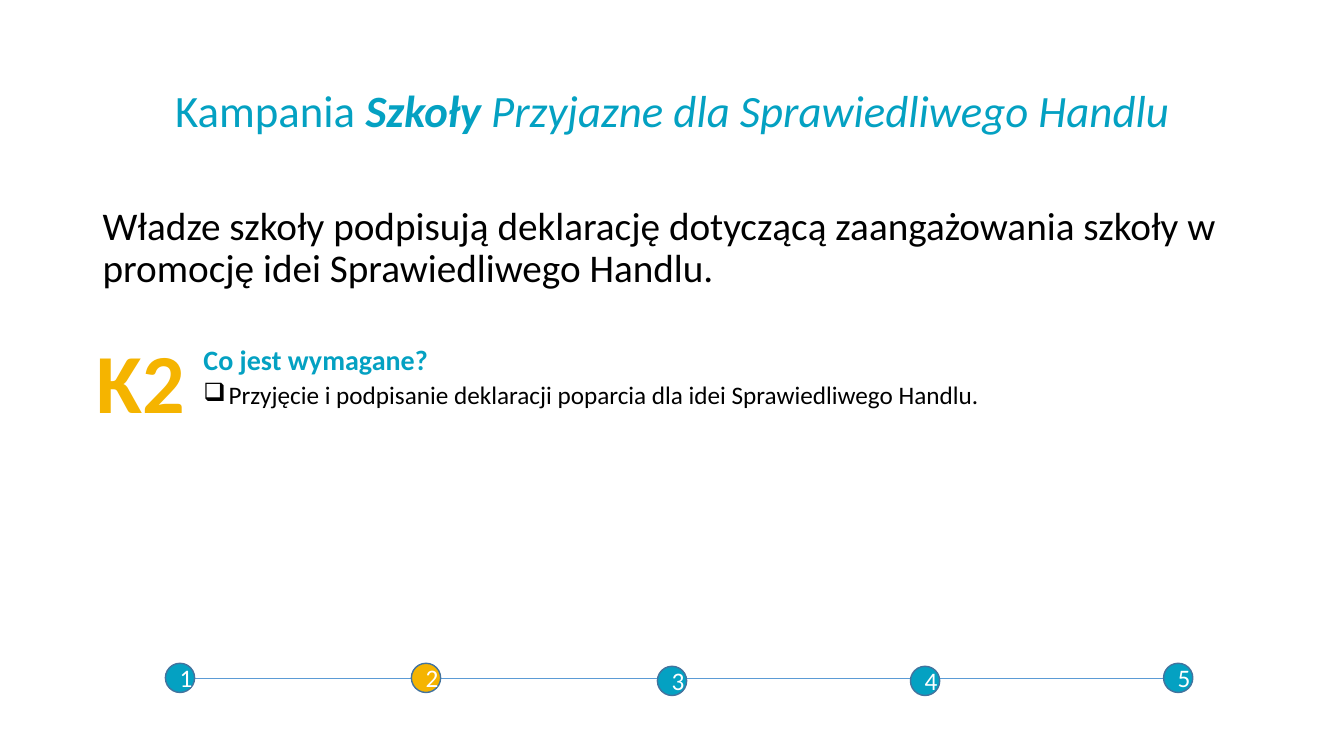
import pptx
import pptx.util
import pptx.dml.color
import pptx.enum.shapes
import pptx.enum.text
import pptx.oxml.ns
import lxml.etree

Inches = pptx.util.Inches
Pt = pptx.util.Pt
ALIGN = pptx.enum.text.PP_ALIGN
ANCHOR = pptx.enum.text.MSO_ANCHOR

TEAL, AMBER, BLACK, WHITE = "04A1C2", "F5B400", "000000", "FFFFFF"
RIM, TRACK = "43739E", "5B9BD5"


def color(hex_code):
    return pptx.dml.color.RGBColor.from_string(hex_code)


def apply(target, values):
    for name, value in values.items():
        setattr(target, name, value)


def add_run(paragraph, text, size, ink, **style):
    run = paragraph.add_run()
    run.text = text
    apply(run.font, {"name": "Calibri", "size": Pt(size), **style})
    run.font.color.rgb = color(ink)


def add_text_box(slide, left, top, width, height, **frame_format):
    box = slide.shapes.add_textbox(Inches(left), Inches(top), Inches(width), Inches(height))
    apply(box.text_frame, {"word_wrap": True, **frame_format})
    return box.text_frame


def indent(paragraph, left, first=0, bullet=None):
    properties = paragraph._p.get_or_add_pPr()
    properties.set("marL", str(Inches(left)))
    properties.set("indent", str(Inches(first)))
    if bullet:
        mark = lxml.etree.SubElement(properties, pptx.oxml.ns.qn("a:buChar"))
        mark.set("char", bullet)


def add_title(slide, left, top, width, height):
    frame = add_text_box(slide, left, top, width, height, vertical_anchor=ANCHOR.MIDDLE)
    title = frame.paragraphs[0]
    apply(title, {"alignment": ALIGN.CENTER, "line_spacing": 0.9})
    add_run(title, "Kampania ", 32, TEAL)
    add_run(title, "Szkoły ", 32, TEAL, bold=True, italic=True)
    add_run(title, "Przyjazne dla Sprawiedliwego Handlu", 32, TEAL, italic=True)


def add_criterion(slide, left, top, width, height):
    frame = add_text_box(slide, left, top, width, height)
    summary = frame.paragraphs[0]
    question = frame.add_paragraph()
    requirement = frame.add_paragraph()
    indent(question, 1)
    indent(requirement, 1.25, -0.25, "❑")
    for paragraph, space in ((summary, 0), (question, 39), (requirement, 5)):
        apply(paragraph, {"line_spacing": 0.9, "space_before": Pt(space)})
    add_run(summary, "Władze szkoły podpisują deklarację dotyczącą zaangażowania szkoły "
            "w promocję idei Sprawiedliwego Handlu.", 28, BLACK)
    add_run(question, "Co jest wymagane?", 20, TEAL, bold=True)
    add_run(requirement, "Przyjęcie i podpisanie deklaracji poparcia dla idei "
            "Sprawiedliwego Handlu.", 18, BLACK)

    code = add_text_box(slide, left - 0.06, top + 1.22, 1.11, 1.11)
    add_run(code.paragraphs[0], "K2", 60, AMBER, bold=True)


def add_step(slide, left, top, size, number, fill):
    step = slide.shapes.add_shape(pptx.enum.shapes.MSO_SHAPE.OVAL,
                                  Inches(left), Inches(top), Inches(size), Inches(size))
    step.shadow.inherit = False
    step.fill.solid()
    step.fill.fore_color.rgb = color(fill)
    step.line.color.rgb = color(RIM)
    step.line.width = Pt(1)
    apply(step.text_frame, {"word_wrap": True, "vertical_anchor": ANCHOR.MIDDLE})
    label = step.text_frame.paragraphs[0]
    label.alignment = ALIGN.CENTER
    add_run(label, str(number), 18, WHITE)


def add_progress(slide, left, top, width, size, current):
    middle = Inches(top + 0.15)
    track = slide.shapes.add_connector(pptx.enum.shapes.MSO_CONNECTOR.STRAIGHT,
                                       Inches(left + 0.09), middle,
                                       Inches(left + width - 0.22), middle)
    track.line.color.rgb = color(TRACK)
    track.line.width = Pt(0.5)
    lxml.etree.SubElement(track._element.spPr, pptx.oxml.ns.qn("a:effectLst"))
    offsets = ((0, 0), (2.44, 0), (4.88, 0.03), (7.39, 0.03), (9.9, 0))
    for number, (across, down) in enumerate(offsets, 1):
        add_step(slide, left + across, top + down, size, number,
                 AMBER if number == current else TEAL)


def main():
    deck = pptx.Presentation()
    apply(deck, {"slide_width": Inches(13.33), "slide_height": Inches(7.5)})
    slide = deck.slides.add_slide(deck.slide_layouts[6])
    add_title(slide, 0.92, 0.4, 11.5, 1.45)
    add_progress(slide, 1.64, 6.58, 10.19, 0.29, current=2)
    add_criterion(slide, 0.92, 2, 11.5, 4.76)
    deck.save("out.pptx")


if __name__ == "__main__":
    main()
